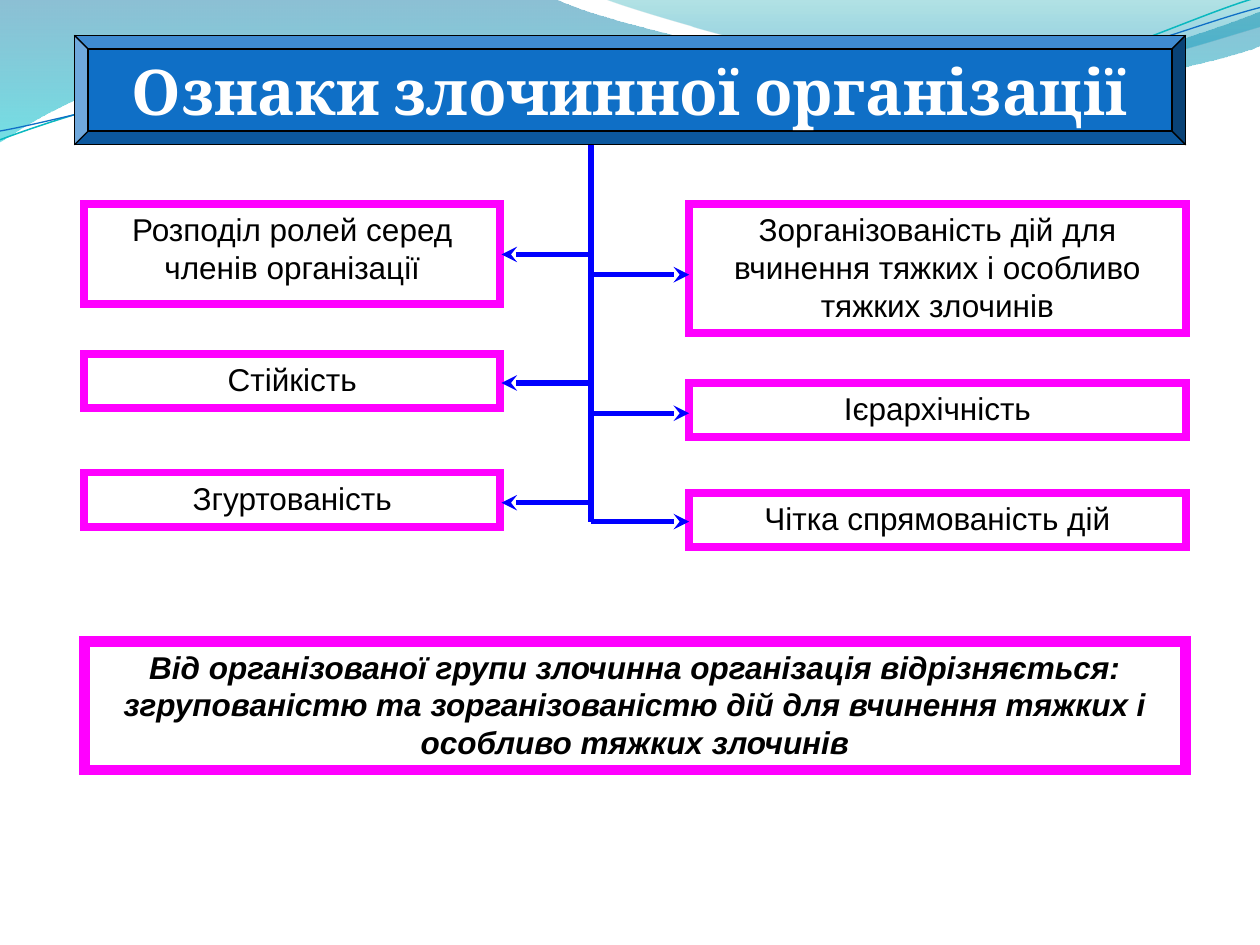
"""Builds a slide on the features of a criminal organisation."""
from lxml import etree
from pptx import Presentation
from pptx import util as u
from pptx.dml.color import RGBColor
from pptx.enum import shapes, text
from pptx.oxml import ns

WHITE = RGBColor(0xFF, 0xFF, 0xFF)
BLACK = RGBColor(0, 0, 0)
BLUE = RGBColor(0, 0, 0xFF)
MAGENTA = RGBColor(0xFF, 0, 0xFF)
ACCENT = RGBColor(0x0F, 0x6F, 0xC6)
TEAL = RGBColor(0x0A, 0xB8, 0xBF)
DEEP_BLUE = RGBColor(0, 0x74, 0xA1)
CYAN = RGBColor(0, 0xC6, 0xCF)
SEA = RGBColor(0, 0xA1, 0xA9)
SKY = RGBColor(0, 0x8B, 0xBF)

LEFT_X, LEFT_W = 0.67, 3.3
RIGHT_X, RIGHT_W = 5.47, 3.94
TRUNK_X = 4.69

LEFT_BOXES = [
    (1.62, 0.79, "Розподіл ролей серед членів організації"),
    (2.81, 0.43, "Стійкість"),
    (3.75, 0.43, "Згуртованість"),
]
RIGHT_BOXES = [
    (1.62, 1.02, "Зорганізованість дій для вчинення тяжких і особливо тяжких злочинів"),
    (3.04, 0.43, "Ієрархічність"),
    (3.91, 0.43, "Чітка спрямованість дій"),
]
ARROWS = [(2.02, 2.18), (3.04, 3.28), (3.99, 4.14)]
SUMMARY = ("Від організованої групи злочинна організація відрізняється: "
           "згрупованістю та зорганізованістю дій для вчинення тяжких і "
           "особливо тяжких злочинів")

WAVE_LEFT = [
    (0, 0), (4.4, -0.01), (4.76, 0.17, 6.64, 0.63, 7.58, 0.63),
    (8.53, 0.63, 9.58, 0.26, 10, 0.09), (10.01, 0.36),
    (9.83, 0.44, 8.7, 0.76, 7.46, 0.75), (6.22, 0.75, 3.82, 0.28, 2.57, 0.34),
    (1.29, 0.36, 0.46, 0.83, -0.01, 1.13), (0, 0),
]
WAVE_RIGHT = [
    (4.79, -0.01), (5.09, 0.11, 6.82, 0.62, 7.69, 0.65),
    (8.56, 0.69, 9.61, 0.32, 10, 0.21), (10, 0), (4.79, -0.01),
]
STRAND_TEAL = [
    (0, 1.11), (0.48, 0.93, 1.58, 0.57, 2.77, 0.52),
    (3.95, 0.47, 5.93, 0.89, 7.13, 0.8), (8.33, 0.71, 9.38, 0.15, 9.98, -0.02),
]
STRAND_BLUE = [
    (0, 1.04), (0.47, 0.96, 1.64, 0.61, 2.83, 0.56),
    (4.03, 0.51, 5.97, 0.84, 7.17, 0.75), (8.36, 0.67, 9.41, 0.21, 10, 0.06),
]


def write(tf, content, size=18, font="Arial", color=BLACK, bold=False,
          italic=False, anchor=text.MSO_ANCHOR.TOP, wrap=True):
    tf.word_wrap = wrap
    tf.vertical_anchor = anchor
    p = tf.paragraphs[0]
    p.alignment = text.PP_ALIGN.CENTER
    r = p.add_run()
    r.text = content
    r.font.size, r.font.name = u.Pt(size), font
    r.font.bold, r.font.italic = bold, italic
    r.font.color.rgb = color


class Deck:
    def __init__(self):
        self.prs = Presentation()
        self.prs.slide_width, self.prs.slide_height = u.Inches(10), u.Inches(7.5)
        self.s = self.prs.slides.add_slide(self.prs.slide_layouts[6])

    def outline(self, sp, color, width):
        sp.line.color.rgb = color
        sp.line.width = u.Pt(width)
        return sp.line._get_or_add_ln()

    def freeform(self, steps, close):
        ends = [tuple(map(u.Inches, step[-2:])) for step in steps]
        builder = self.s.shapes.build_freeform(*ends[0])
        builder.add_line_segments(ends[1:], close=close)
        sp = builder.convert_to_shape()
        sp.shadow.inherit = False
        segments = list(sp._element.iter(ns.qn("a:lnTo")))
        for segment, step in zip(segments, steps[1:]):
            if len(step) == 6:
                segment.getparent().replace(segment, self.curve(sp, step))
        return sp

    def curve(self, sp, step):
        bezier = etree.Element(ns.qn("a:cubicBezTo"))
        for x, y in zip(step[::2], step[1::2]):
            etree.SubElement(bezier, ns.qn("a:pt"), x=str(u.Inches(x) - sp.left),
                             y=str(u.Inches(y) - sp.top))
        return bezier

    def wave(self, steps, stops):
        sp = self.freeform(steps, True)
        sp.line.fill.background()
        sp.fill.gradient()
        sp.fill.gradient_angle = 270
        for stop, (position, color, _) in zip(sp.fill.gradient_stops, stops):
            stop.color.rgb = color
            stop.position = position
        marks = sp._element.spPr.iter(ns.qn("a:srgbClr"))
        for mark, (_, _, alpha) in zip(marks, stops):
            etree.SubElement(mark, ns.qn("a:alpha"), val=str(alpha * 1000))

    def strand(self, steps, color, width):
        sp = self.freeform(steps, False)
        sp.fill.background()
        self.outline(sp, color, width)

    def shape(self, kind, box, content, fill=WHITE, line=MAGENTA, width=4.5, **fmt):
        sp = self.s.shapes.add_shape(kind, *map(u.Inches, box))
        sp.shadow.inherit = False
        sp.fill.solid()
        sp.fill.fore_color.rgb = fill
        ln = self.outline(sp, line, width)
        etree.SubElement(ln, ns.qn("a:miter"), lim="800000")
        write(sp.text_frame, content, **fmt)

    def title(self, box, content):
        self.shape(shapes.MSO_SHAPE.BEVEL, box, content, ACCENT, BLACK, 0.75,
                   size=36, font="Cambria", color=WHITE, bold=True,
                   anchor=text.MSO_ANCHOR.MIDDLE, wrap=False)

    def box(self, box, content, **fmt):
        self.shape(shapes.MSO_SHAPE.RECTANGLE, box, content, **fmt)

    def line(self, x1, y1, x2, y2, arrow=True):
        sp = self.s.shapes.add_connector(shapes.MSO_CONNECTOR.STRAIGHT,
                                         *map(u.Inches, (x1, y1, x2, y2)))
        ln = self.outline(sp, BLUE, 3)
        if arrow:
            etree.SubElement(ln, ns.qn("a:tailEnd"), type="stealth")
        etree.SubElement(sp._element.spPr, ns.qn("a:effectLst"))


def main():
    deck = Deck()
    deck.wave(WAVE_LEFT, [(0, DEEP_BLUE, 45), (1, CYAN, 55)])
    deck.wave(WAVE_RIGHT, [(0, SEA, 30), (0.8, SKY, 45)])
    deck.strand(STRAND_TEAL, TEAL, 0.85)
    deck.strand(STRAND_BLUE, ACCENT, 0.75)
    deck.title((0.59, 0.28, 8.82, 0.87), "Ознаки злочинної організації")
    for x, width, boxes in ((LEFT_X, LEFT_W, LEFT_BOXES), (RIGHT_X, RIGHT_W, RIGHT_BOXES)):
        for y, height, content in boxes:
            deck.box((x, y, width, height), content)
    deck.box((LEFT_X, 5.09, 8.74, 1.02), SUMMARY, width=6, bold=True, italic=True)
    deck.line(TRUNK_X, 1.15, TRUNK_X, 4.14, arrow=False)
    for left_y, right_y in ARROWS:
        deck.line(TRUNK_X, left_y, 3.98, left_y)
        deck.line(TRUNK_X, right_y, RIGHT_X, right_y)
    deck.prs.save("out.pptx")


if __name__ == "__main__":
    main()
